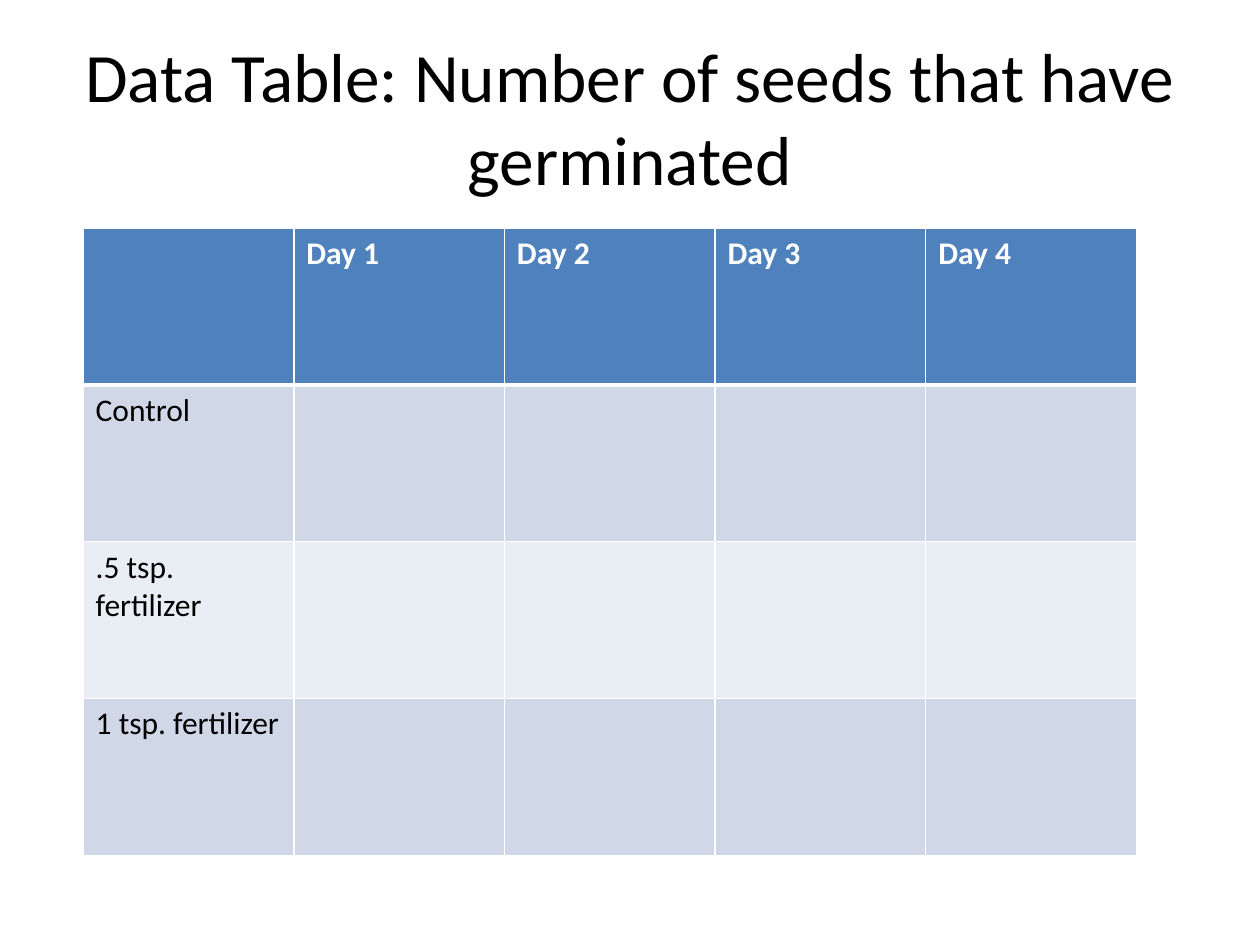
from dataclasses import dataclass

from lxml import etree
from pptx import Presentation
from pptx import util as u
from pptx.dml.color import RGBColor
from pptx.enum import text
from pptx.oxml import ns


@dataclass(frozen=True)
class Theme:
    font: str = "Calibri"
    ink: str = "000000"
    white: str = "FFFFFF"
    header: str = "4F81BD"
    bands: tuple = ("D0D8E8", "E9EDF4")
    title_size: float = 39.6
    table_size: float = 18
    thin: float = 1
    thick: float = 3


theme = Theme()


def write(frame, content, size, color, bold=False, align=text.PP_ALIGN.LEFT):
    frame.text = content
    paragraph = frame.paragraphs[0]
    paragraph.alignment = align
    font = paragraph.font
    font.name, font.size, font.bold = theme.font, u.Pt(size), bold
    font.color.rgb = RGBColor.from_string(color)


def add_border(cell, side, width):
    properties = cell._tc.get_or_add_tcPr()
    line = etree.SubElement(properties, ns.qn(f"a:ln{side}"), w=str(u.Pt(width)))
    fill = etree.SubElement(line, ns.qn("a:solidFill"))
    etree.SubElement(fill, ns.qn("a:srgbClr"), val=theme.white)


presentation = Presentation()
presentation.slide_width, presentation.slide_height = u.Inches(10), u.Inches(7.5)
slide = presentation.slides.add_slide(presentation.slide_layouts[5])

title = slide.shapes.title
title.left, title.top = u.Inches(0.5), u.Inches(0.3)
title.width, title.height = u.Inches(9), u.Inches(1.25)
title.text_frame.word_wrap = True
title.text_frame.auto_size = text.MSO_AUTO_SIZE.NONE
title.text_frame.vertical_anchor = text.MSO_ANCHOR.MIDDLE
write(title.text_frame, "Data Table: Number of seeds that have germinated",
      size=theme.title_size, color=theme.ink, align=text.PP_ALIGN.CENTER)

days = [f"Day {day}" for day in range(1, 5)]
treatments = ["Control", ".5 tsp. fertilizer", "1 tsp. fertilizer"]
rows = [["", *days]] + [[treatment] + [""] * len(days) for treatment in treatments]

table = slide.shapes.add_table(
    len(rows), len(rows[0]),
    u.Inches(0.66), u.Inches(1.81), u.Inches(8.36), u.Inches(4.98)).table

for row_index, row in enumerate(rows):
    is_header = row_index == 0
    background = theme.header if is_header else theme.bands[(row_index - 1) % 2]
    widths = {
        "L": theme.thin,
        "R": theme.thin,
        "T": theme.thick if row_index == 1 else theme.thin,
        "B": theme.thick if is_header else theme.thin,
    }
    for column_index, content in enumerate(row):
        cell = table.cell(row_index, column_index)
        for side, width in widths.items():
            add_border(cell, side, width)
        cell.fill.solid()
        cell.fill.fore_color.rgb = RGBColor.from_string(background)
        write(cell.text_frame, content, size=theme.table_size,
              color=theme.white if is_header else theme.ink, bold=is_header)

presentation.save("out.pptx")
